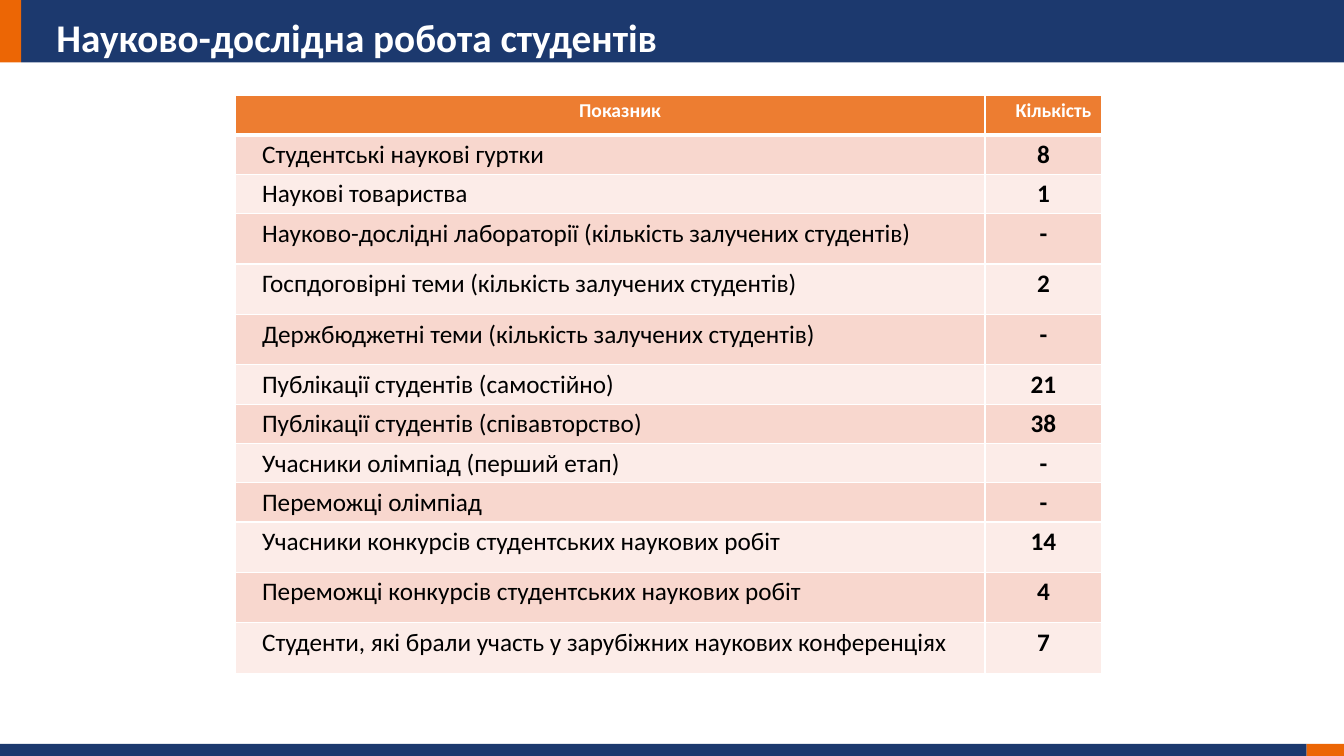
from lxml.etree import SubElement as Sub
from pptx import Presentation
from pptx.dml.color import RGBColor as RGB
from pptx.enum.shapes import MSO_SHAPE as Shape
from pptx.enum.text import MSO_ANCHOR as Anchor, PP_ALIGN as Align
from pptx.oxml.ns import qn
from pptx.util import Inches, Pt

HUES = {
    "navy": "1C396E",
    "orange": "EC6605",
    "head": "ED7D31",
    "dark": "F8D7CE",
    "light": "FCECE8",
    "white": "FFFFFF",
    "black": "000000",
}
FONT = "Calibri"
LOW, HIGH = 0.39, 0.5
HEAD = ("Показник", "Кількість")
ROWS = [
    ("Студентські наукові гуртки", "8", LOW),
    ("Наукові товариства", "1", LOW),
    ("Науково-дослідні лабораторії (кількість залучених студентів)", "-", HIGH),
    ("Госпдоговірні теми (кількість залучених студентів)", "2", HIGH),
    ("Держбюджетні теми (кількість залучених студентів)", "-", HIGH),
    ("Публікації студентів (самостійно)", "21", LOW),
    ("Публікації студентів (співавторство)", "38", LOW),
    ("Учасники олімпіад (перший етап)", "-", LOW),
    ("Переможці олімпіад", "-", LOW),
    ("Учасники конкурсів студентських наукових робіт", "14", HIGH),
    ("Переможці конкурсів студентських наукових робіт", "4", HIGH),
    ("Студенти, які брали участь у зарубіжних наукових конференціях", "7", HIGH),
]


def add_rect(slide, left, top, width, height, hue):
    """Place a plain filled rectangle."""
    box = slide.shapes.add_shape(
        Shape.RECTANGLE, Inches(left), Inches(top), Inches(width), Inches(height))
    box.shadow.inherit = False
    box.fill.solid()
    box.fill.fore_color.rgb = RGB.from_string(HUES[hue])
    box.line.fill.background()


def add_run(para, text, size, hue, bold):
    """Append one styled run to a paragraph."""
    run = para.add_run()
    run.text = text
    font = run.font
    font.name, font.size, font.bold = FONT, Pt(size), bold
    font.color.rgb = RGB.from_string(HUES[hue])


def add_bar(slide, left, top, width, height, accent, first):
    """Draw a navy bar with an orange accent at its start or its end."""
    rest = width - accent
    add_rect(slide, left + (accent if first else 0), top, rest, height, "navy")
    add_rect(slide, left + (0 if first else rest), top, accent, height, "orange")


def add_title(slide, left, top, width, height, text):
    """Write the slide heading over the top bar."""
    frame = slide.shapes.add_textbox(
        Inches(left), Inches(top), Inches(width), Inches(height)).text_frame
    frame.word_wrap = True
    frame.vertical_anchor = Anchor.TOP
    frame.margin_left = frame.margin_top = 0
    frame.margin_right, frame.margin_bottom = Inches(0.33), Inches(0.13)
    para = frame.paragraphs[0]
    para.line_spacing = 0.85
    add_run(para, text, 28, "white", True)


def add_edges(cell, base):
    """Give a cell white borders, with its own width for the bottom one."""
    props = cell._tc.get_or_add_tcPr()
    for side, width in (("L", 1), ("R", 1), ("T", 1), ("B", base)):
        line = Sub(props, qn(f"a:ln{side}"), w=str(Pt(width)))
        Sub(Sub(line, qn("a:solidFill")), qn("a:srgbClr"), val=HUES["white"])


def fill_cell(cell, text, fill, size, hue, bold, align, indent, base=1):
    """Style one table cell and write its text."""
    add_edges(cell, base)
    cell.fill.solid()
    cell.fill.fore_color.rgb = RGB.from_string(HUES[fill])
    cell.margin_left = cell.margin_right = Inches(0.07)
    cell.margin_top = cell.margin_bottom = 0
    para = cell.text_frame.paragraphs[0]
    para.alignment = align
    para.line_spacing = 1.15
    props = para._p.get_or_add_pPr()
    props.set("marL", str(Inches(indent)))
    props.set("indent", "0")
    add_run(para, text, size, hue, bold)


def add_grid(slide, left, top, width, count):
    """Build the table of indicators, with a narrow column for the counts."""
    tall = [LOW] + [row[2] for row in ROWS]
    grid = slide.shapes.add_table(
        len(tall), 2, Inches(left), Inches(top), Inches(width), Inches(sum(tall))).table
    for col, span in zip(grid.columns, (width - count, count)):
        col.width = Inches(span)
    for row, high in zip(grid.rows, tall):
        row.height = Inches(high)
    for col, text in enumerate(HEAD):
        fill_cell(grid.cell(0, col), text, "head", 14, "white", True, Align.CENTER, 0.2, 3)
    for num, (label, value, _) in enumerate(ROWS, 1):
        fill = "dark" if num % 2 else "light"
        fill_cell(grid.cell(num, 0), label, fill, 18, "black", False, Align.LEFT, 0.2)
        fill_cell(grid.cell(num, 1), value, fill, 18, "black", True, Align.CENTER, 0)


def main():
    """Build the slide and save it."""
    deck = Presentation()
    deck.slide_width, deck.slide_height = Inches(13.33), Inches(7.5)
    slide = deck.slides.add_slide(deck.slide_layouts[6])
    add_bar(slide, -0.03, -0.02, 13.36, 1.22, 0.24, True)
    add_bar(slide, -0.03, 7.38, 13.36, 0.12, 0.37, False)
    add_title(slide, 0.56, 0.2, 9.21, 0.9, "Науково-дослідна робота студентів")
    add_rect(slide, -0.07, 0.62, 13.4, 0.64, "white")
    add_grid(slide, 2.33, 0.95, 8.6, 1.16)
    deck.save("out.pptx")


if __name__ == "__main__":
    main()
